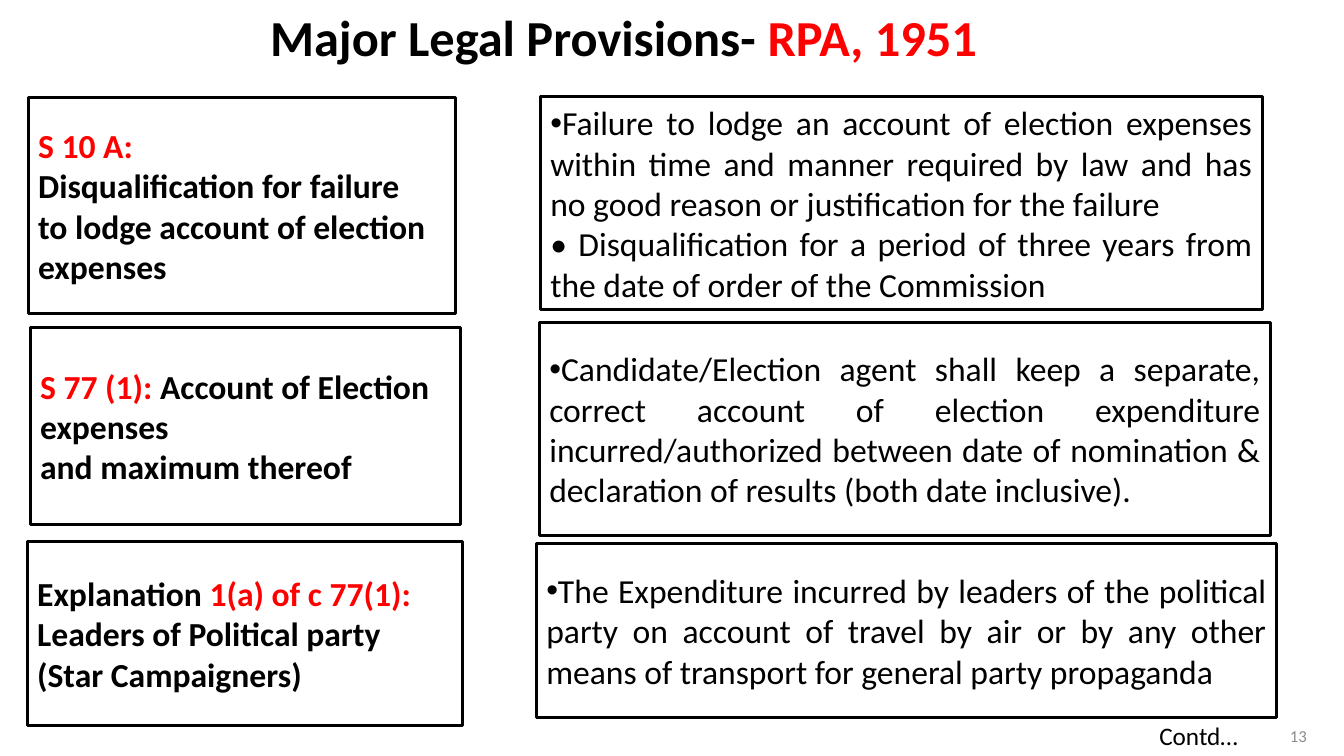
from lxml import etree
from pptx import Presentation
from pptx.dml.color import RGBColor
from pptx.enum.shapes import MSO_SHAPE
from pptx.enum.text import MSO_ANCHOR, PP_ALIGN
from pptx.oxml.ns import qn
from pptx.util import Pt

RECT = MSO_SHAPE.RECTANGLE
TOP, MIDDLE = MSO_ANCHOR.TOP, MSO_ANCHOR.MIDDLE
LEFT, CENTER, RIGHT, JUSTIFY = (
    PP_ALIGN.LEFT, PP_ALIGN.CENTER, PP_ALIGN.RIGHT, PP_ALIGN.JUSTIFY)

TITLE = [[("Major Legal Provisions- ", "ink"), ("RPA, 1951", "accent")]]

SECTIONS = [
    ((28, 97, 424, 214), JUSTIFY, [
        [("S 10 A:", "accent")],
        [("Disqualification for failure", "ink")],
        [("to lodge account of election", "ink")],
        [("expenses", "ink")],
    ]),
    ((30, 325, 427, 195), LEFT, [
        [("S 77 (1): ", "accent"), ("Account of Election expenses", "ink")],
        [("and maximum thereof", "ink")],
    ]),
    ((27, 537, 432, 183), LEFT, [
        [("Explanation ", "ink"), ("1(a) of c 77(1): ", "accent"),
         ("Leaders of Political party (Star Campaigners)", "ink")],
    ]),
]

PROVISIONS = [
    ((536, 96, 716, 211), [
        "Failure to lodge an account of election expenses within time and "
        "manner required by law and has no good reason or justification for "
        "the failure",
        "• Disqualification for a period of three years from the date of "
        "order of the Commission",
    ]),
    ((535, 320, 725, 211), [
        "Candidate/Election agent shall keep a separate, correct account of "
        "election expenditure incurred/authorized between date of nomination "
        "& declaration of results (both date inclusive).",
    ]),
    ((532, 539, 734, 173), [
        "The Expenditure incurred by leaders of the political party on "
        "account of travel by air or by any other means of transport for "
        "general party propaganda",
    ]),
]

THEME = {
    "font": "Calibri",
    "ink": RGBColor(0, 0, 0),
    "accent": RGBColor(255, 0, 0),
    "muted": RGBColor(0x8C, 0x8C, 0x8C),
    "paper": RGBColor(255, 255, 255),
    "title": 36, "body": 24, "note": 18, "number": 12, "border": 2,
}

PX = 9144


def emu(box):
    return [n * PX for n in box]


def write(sp, paragraphs, size, align=LEFT, bold=False, anchor=MIDDLE):
    tf = sp.text_frame
    tf.word_wrap = True
    tf.vertical_anchor = anchor
    for i, runs in enumerate(paragraphs):
        p = tf.add_paragraph() if i else tf.paragraphs[0]
        p.alignment = align
        for text, color in runs:
            r = p.add_run()
            r.text = text
            r.font.name = THEME["font"]
            r.font.size = Pt(THEME[size])
            r.font.bold = bold
            r.font.color.rgb = THEME[color]


def add_text(s, box, *args, **style):
    write(s.shapes.add_textbox(*emu(box)), *args, **style)


def add_box(s, box, paragraphs, align, bold=False):
    sp = s.shapes.add_shape(RECT, *emu(box))
    sp.shadow.inherit = False
    sp.fill.solid()
    sp.fill.fore_color.rgb = THEME["paper"]
    sp.line.color.rgb = THEME["ink"]
    sp.line.width = Pt(THEME["border"])
    write(sp, paragraphs, "body", align, bold)
    return sp


def add_bullet(p):
    pPr = p._p.get_or_add_pPr()
    etree.SubElement(pPr, qn("a:buFont"), typeface="Arial")
    etree.SubElement(pPr, qn("a:buChar"), char="•")


def main():
    prs = Presentation()
    prs.slide_width, prs.slide_height = emu((1333, 750))
    s = prs.slides.add_slide(prs.slide_layouts[6])

    add_text(s, (52, 0, 1133, 72), TITLE, "title", CENTER, bold=True)
    add_text(s, (995, 710, 311, 40), [[("13", "muted")]], "number", RIGHT)
    for box, lines in PROVISIONS:
        sp = add_box(s, box, [[(line, "ink")] for line in lines], JUSTIFY)
        add_bullet(sp.text_frame.paragraphs[0])
    for box, align, paragraphs in SECTIONS:
        add_box(s, box, paragraphs, align, bold=True)
    add_text(s, (1140, 710, 117, 40), [[("Contd…", "ink")]], "note", anchor=TOP)

    prs.save("out.pptx")


if __name__ == "__main__":
    main()
